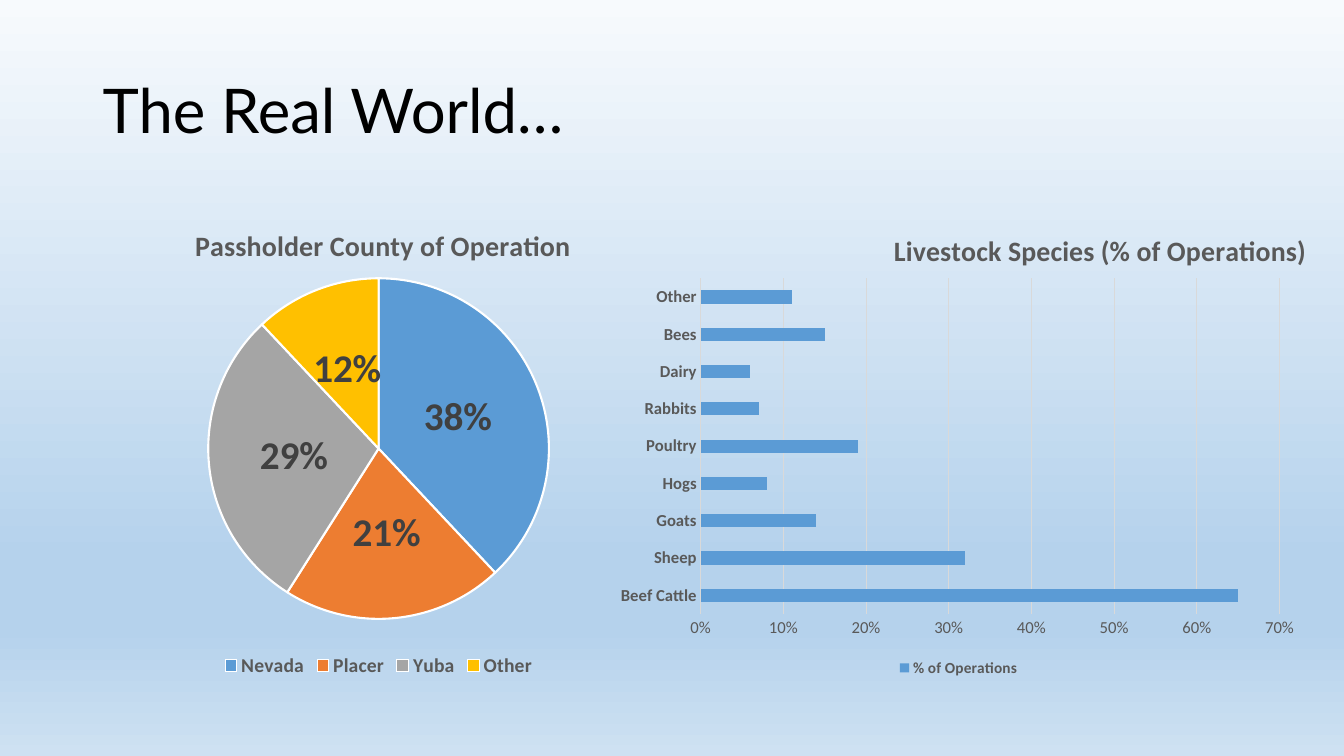
from lxml import etree
from pptx import Presentation
from pptx.chart.data import CategoryChartData
from pptx.dml.color import RGBColor
from pptx.enum.chart import XL_CHART_TYPE as Kind, XL_LABEL_POSITION as LabelPos
from pptx.enum.chart import XL_LEGEND_POSITION as LegendPos, XL_TICK_MARK as Tick
from pptx.enum.text import MSO_ANCHOR
from pptx.oxml.ns import qn
from pptx.util import Inches, Pt

COLORS = {"title": "000000", "text": "595959", "label": "404040", "grid": "D9D9D9",
          "blue": "5B9BD5", "orange": "ED7D31", "gray": "A5A5A5", "gold": "FFC000",
          "white": "FFFFFF"}
BACKGROUND = [(0, "F7FAFD"), (74, "B5D2EC"), (83, "B5D2EC"), (100, "CEE1F2")]
COUNTIES = [("Nevada", 0.38, "blue"), ("Placer", 0.21, "orange"),
            ("Yuba", 0.29, "gray"), ("Other", 0.12, "gold")]
SPECIES = [("Beef Cattle", 0.65), ("Sheep", 0.32), ("Goats", 0.14), ("Hogs", 0.08),
           ("Poultry", 0.19), ("Rabbits", 0.07), ("Dairy", 0.06), ("Bees", 0.15),
           ("Other", 0.11)]


def rgb(name):
    return RGBColor.from_string(COLORS[name])


def style(font, size, color="text", bold=False, name="Calibri"):
    font.size, font.bold, font.name = Pt(size), bold, name
    font.color.rgb = rgb(color)


def add_title(s, text, left, top, width, height, size, font):
    tf = s.shapes.add_textbox(*map(Inches, (left, top, width, height))).text_frame
    tf.word_wrap = True
    tf.vertical_anchor = MSO_ANCHOR.MIDDLE
    p = tf.paragraphs[0]
    p.line_spacing = 0.9
    r = p.add_run()
    r.text = text
    style(r.font, size, "title", name=font)


def set_background(s, stops):
    fill = s.background.fill
    fill.gradient()
    fill.gradient_angle = 270
    stop_list = s.element.find(".//" + qn("a:gsLst"))
    for old in list(stop_list):
        stop_list.remove(old)
    for pos, color in stops:
        stop = etree.SubElement(stop_list, qn("a:gs"), pos=str(pos * 1000))
        etree.SubElement(stop, qn("a:srgbClr"), val=color)


def set_layout(parent, index, **place):
    for old in parent.findall(qn("c:layout")):
        parent.remove(old)
    layout = etree.Element(qn("c:layout"))
    parent.insert(index, layout)
    manual = etree.SubElement(layout, qn("c:manualLayout"))
    if "w" in place:
        etree.SubElement(manual, qn("c:layoutTarget"), val="inner")
    for axis in "xy":
        etree.SubElement(manual, qn(f"c:{axis}Mode"), val="edge")
    for key, value in place.items():
        etree.SubElement(manual, qn(f"c:{key}"), val=str(value))


def add_chart(s, title, kind, series, rows, box, plot, title_at, legend_size):
    data = CategoryChartData(number_format="0%")
    data.categories = [row[0] for row in rows]
    data.add_series(series, [row[1] for row in rows])
    chart = s.shapes.add_chart(kind, *map(Inches, box), data).chart
    style(chart.font, 10, "title")
    chart.has_title = True
    p = chart.chart_title.text_frame.paragraphs[0]
    r = p.add_run()
    r.text = title
    style(r.font, 20, bold=True)
    set_layout(chart.chart_title._element, 1, **dict(zip("xy", title_at)))
    set_layout(chart._chartSpace.chart.plotArea, 0, **dict(zip("xywh", plot)))
    chart.has_legend = True
    chart.legend.position = LegendPos.BOTTOM
    chart.legend.include_in_layout = False
    style(chart.legend.font, legend_size, bold=True)
    return chart


def format_pie(chart):
    plot = chart.plots[0]
    plot.vary_by_categories = True
    for i, (_, _, color) in enumerate(COUNTIES):
        point = plot.series[0].points[i].format
        point.fill.solid()
        point.fill.fore_color.rgb = rgb(color)
        point.line.color.rgb = rgb("white")
        point.line.width = Pt(1.5)
    plot.has_data_labels = True
    labels = plot.data_labels
    labels.show_value = True
    labels.show_percentage = False
    labels.number_format = "0%"
    labels.number_format_is_linked = False
    labels.position = LabelPos.CENTER
    style(labels.font, 28, "label", bold=True)


def format_bars(chart):
    plot = chart.plots[0]
    plot.vary_by_categories = False
    plot.gap_width = 182
    fill = plot.series[0].format.fill
    fill.solid()
    fill.fore_color.rgb = rgb("blue")
    cat, val = chart.category_axis, chart.value_axis
    for axis in (cat, val):
        axis.major_tick_mark = axis.minor_tick_mark = Tick.NONE
        style(axis.tick_labels.font, 12, bold=axis is cat)
    val.minimum_scale, val.maximum_scale, val.major_unit = 0, 0.7, 0.1
    val.tick_labels.number_format = "0%"
    val.tick_labels.number_format_is_linked = False
    val.format.line.fill.background()
    val.has_major_gridlines = True
    for line in (cat.format.line, val.major_gridlines.format.line):
        line.color.rgb = rgb("grid")
        line.width = Pt(0.75)


def main():
    prs = Presentation()
    prs.slide_width, prs.slide_height = Inches(13.33), Inches(7.5)
    s = prs.slides.add_slide(prs.slide_layouts[6])
    set_background(s, BACKGROUND)
    add_title(s, "The Real World…", 0.92, 0.4, 11.5, 1.45, size=44, font="Lato")
    format_pie(add_chart(
        s, "Passholder County of Operation", Kind.PIE, "Series 1", COUNTIES,
        box=(0.92, 2, 5.67, 4.76), plot=(0.2, 0.16, 0.6, 0.71),
        title_at=(0.17, 0.04), legend_size=14))
    format_bars(add_chart(
        s, "Livestock Species (% of Operations)", Kind.BAR_CLUSTERED, "% of Operations",
        SPECIES, box=(6.05, 2, 6.96, 4.76), plot=(0.13, 0.16, 0.83, 0.7),
        title_at=(0.4, 0.05), legend_size=11))
    prs.save("out.pptx")


if __name__ == "__main__":
    main()
